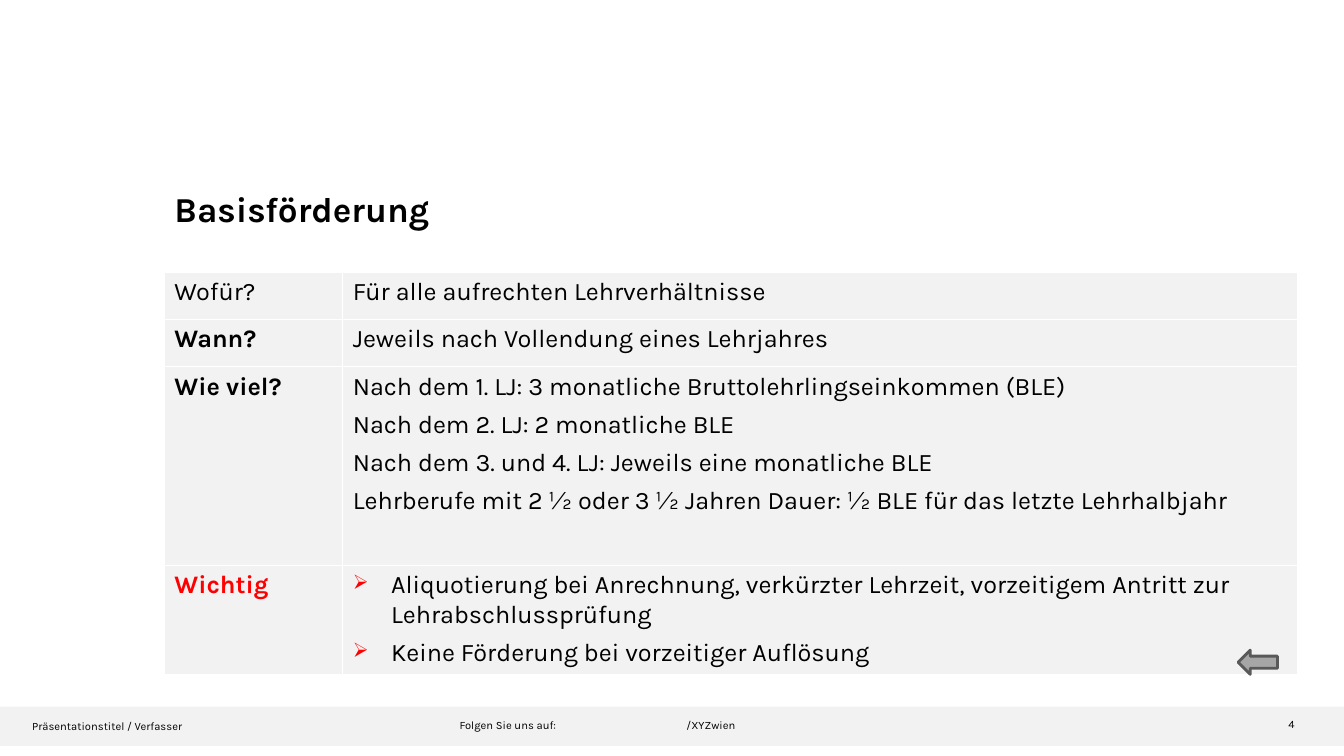
"""Build the slide on basic funding for apprenticeships."""
from dataclasses import dataclass

from lxml.etree import SubElement
from pptx import Presentation
from pptx.dml.color import RGBColor
from pptx.enum.shapes import MSO_SHAPE
from pptx.enum.text import MSO_ANCHOR, PP_ALIGN
from pptx.oxml import parse_xml
from pptx.oxml.ns import nsdecls, qn
from pptx.util import Inches, Pt


@dataclass(frozen=True)
class Theme:
    font: str = "Karla"
    ink: str = "000000"
    alert: str = "FF0000"
    panel: str = "F2F2F2"
    rule: str = "FFFFFF"
    arrow: str = "A6A6A6"
    edge: str = "595959"
    head: int = 25
    body: int = 18
    small: int = 8


look = Theme()


def write(par, text, size, color=look.ink, bold=False):
    run = par.add_run()
    run.text = text
    run.font.name = look.font
    run.font.size = Pt(size)
    run.font.bold = bold
    run.font.color.rgb = RGBColor.from_string(color)


def draw(kind, left, top, width, height, fill):
    shape = slide.shapes.add_shape(
        kind, Inches(left), Inches(top), Inches(width), Inches(height))
    shape.shadow.inherit = False
    shape.fill.solid()
    shape.fill.fore_color.rgb = RGBColor.from_string(fill)
    shape.line.fill.background()
    return shape


deck = Presentation()
deck.slide_width, deck.slide_height = Inches(13.33), Inches(7.5)
slide = deck.slides.add_slide(deck.slide_layouts[5])

draw(MSO_SHAPE.RECTANGLE, 0, 7.01, 13.33, 0.39, look.panel)
notes = [
    ("Präsentationstitel / Verfasser", 0.22, 7.09, 2.73, PP_ALIGN.LEFT),
    ("Folgen Sie uns auf:", 4.46, 7.08, 2, PP_ALIGN.LEFT),
    ("/XYZwien", 6.71, 7.08, 2.58, PP_ALIGN.LEFT),
    ("4", 11.29, 7.07, 3.04, PP_ALIGN.CENTER),
]
for text, left, top, width, align in notes:
    box = slide.shapes.add_textbox(
        Inches(left), Inches(top), Inches(width), Inches(0.24))
    box.text_frame.word_wrap = True
    par = box.text_frame.paragraphs[0]
    par.alignment = align
    write(par, text, look.small)

title = slide.shapes.title
title.left, title.top = Inches(1.63), Inches(1.34)
title.width, title.height = Inches(11.23), Inches(0.99)
title.text_frame.vertical_anchor = MSO_ANCHOR.BOTTOM
title.text_frame.paragraphs[0].alignment = PP_ALIGN.LEFT
write(title.text_frame.paragraphs[0], "Basisförderung", look.head, bold=True)

rows = [
    ("Wofür?", 0.47, look.ink, False, ["Für alle aufrechten Lehrverhältnisse"]),
    ("Wann?", 0.47, look.ink, True, ["Jeweils nach Vollendung eines Lehrjahres"]),
    ("Wie viel?", 1.97, look.ink, True, [
        "Nach dem 1. LJ: 3 monatliche Bruttolehrlingseinkommen (BLE)",
        "Nach dem 2. LJ: 2 monatliche BLE",
        "Nach dem 3. und 4. LJ: Jeweils eine monatliche BLE",
        "Lehrberufe mit 2 ½ oder 3 ½ Jahren Dauer: ½ BLE für das letzte Lehrhalbjahr",
    ]),
    ("Wichtig", 1.06, look.alert, True, [
        "Aliquotierung bei Anrechnung, verkürzter Lehrzeit, vorzeitigem Antritt zur "
        "Lehrabschlussprüfung",
        "Keine Förderung bei vorzeitiger Auflösung",
    ]),
]
grid = slide.shapes.add_table(
    len(rows), 2, Inches(1.63), Inches(2.7), Inches(11.24), Inches(3.97)).table
grid.first_row = grid.horz_banding = False
grid.columns[0].width, grid.columns[1].width = Inches(1.77), Inches(9.47)

for row, (label, height, color, bold, lines) in enumerate(rows):
    grid.rows[row].height = Inches(height)
    name, facts = grid.cell(row, 0), grid.cell(row, 1)
    write(name.text_frame.paragraphs[0], label, look.body, color, bold)
    for num, line in enumerate(lines):
        frame = facts.text_frame
        par = frame.add_paragraph() if num else frame.paragraphs[0]
        if len(lines) > 1:
            par.space_before = Pt(3 if num else 0)
            par.space_after = Pt(3)
        if label == "Wichtig":
            props = par._p.get_or_add_pPr()
            props.set("marL", str(Inches(0.38)))
            props.set("indent", str(Inches(-0.38)))
            tint = SubElement(props, qn("a:buClr"))
            SubElement(tint, qn("a:srgbClr"), val=look.alert)
            SubElement(props, qn("a:buSzPct"), val="80000")
            SubElement(props, qn("a:buChar"), char="➢")
        write(par, line, look.body)
    for cell in (name, facts):
        cell.fill.solid()
        cell.fill.fore_color.rgb = RGBColor.from_string(look.panel)
        for spot, side in enumerate("LRTB"):
            edge = parse_xml(
                f'<a:ln{side} {nsdecls("a")} w="{Pt(1)}"><a:solidFill>'
                f'<a:srgbClr val="{look.rule}"/></a:solidFill></a:ln{side}>')
            cell._tc.get_or_add_tcPr().insert(spot, edge)

back = draw(MSO_SHAPE.LEFT_ARROW, 12.28, 6.45, 0.39, 0.24, look.arrow)
back.line.color.rgb = RGBColor.from_string(look.edge)
back.line.width = Pt(2)

deck.save("out.pptx")
